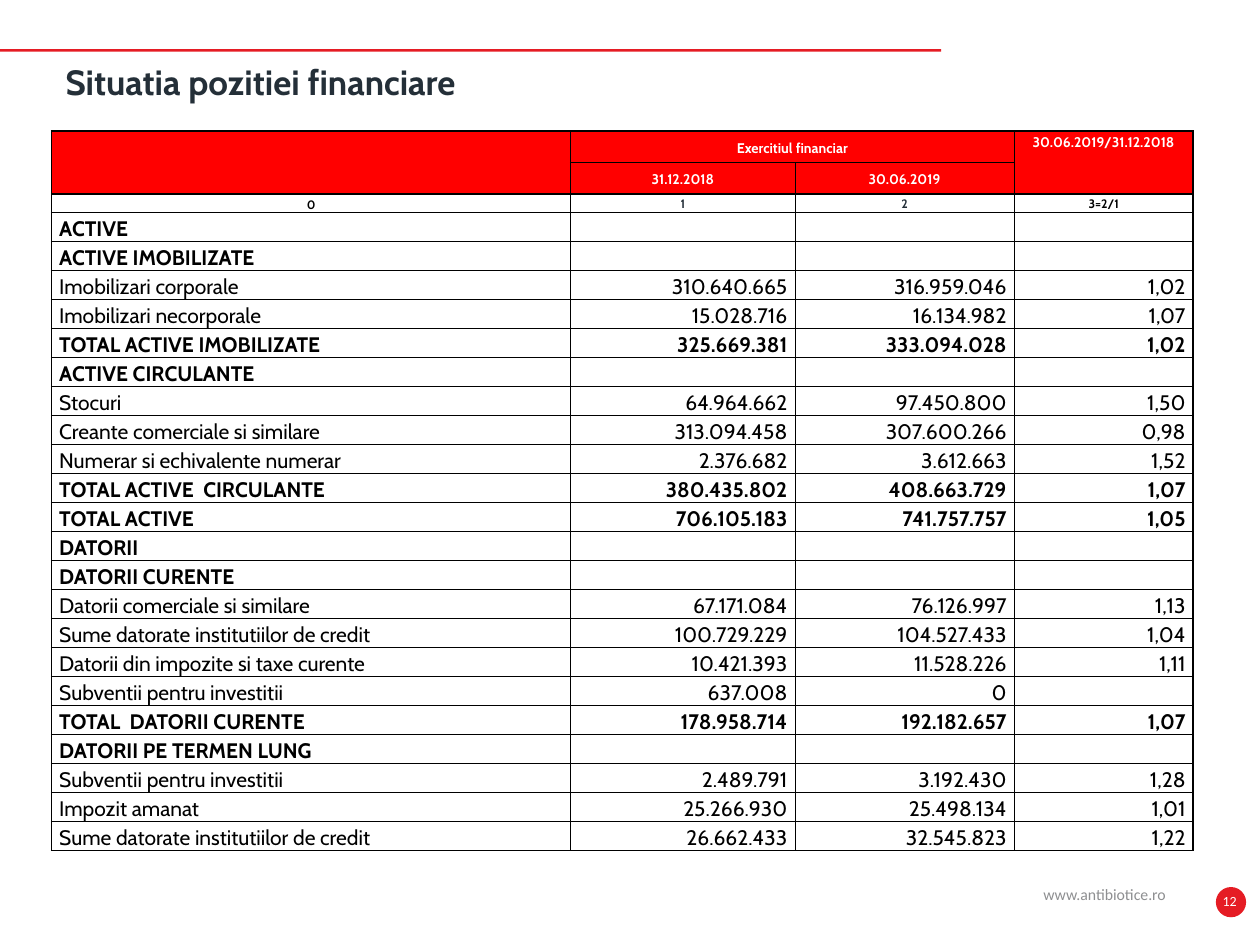
import pptx
import pptx.util
import pptx.oxml
import pptx.dml.color
import pptx.enum.shapes
import pptx.enum.text

Pt = pptx.util.Pt
RGB = pptx.dml.color.RGBColor.from_string
ALIGN = pptx.enum.text.PP_ALIGN
ANCHOR = pptx.enum.text.MSO_ANCHOR
SHAPE = pptx.enum.shapes.MSO_SHAPE

THEME = {
    "accent": "E51C24", "header": "FF0000", "white": "FFFFFF", "black": "000000",
    "dark": "242F38", "grey": "8E8F91",
    "font": "Cabin", "small_font": "Calibri",
    "title": 20, "body": 12, "head": 8, "index": 7, "page": 8, "web": 9,
    "thick": 1, "thin": 0.5,
}

prs = pptx.Presentation()
prs.slide_width = pptx.util.Inches(10)
prs.slide_height = pptx.util.Inches(7.5)
COLS = 100
unit = prs.slide_width / COLS


def grid(*cells):
    return [round(c * unit) for c in cells]


def write(tf, text, size, color, align, anchor, font=THEME["font"], bold=False):
    tf.vertical_anchor = anchor
    p = tf.paragraphs[0]
    p.text = text
    p.alignment = align
    for r in p.runs:
        r.font.size = Pt(size)
        r.font.name = font
        r.font.bold = bold
        r.font.color.rgb = RGB(color)
    if not text:
        end = pptx.oxml.parse_xml(
            '<a:endParaRPr xmlns:a="http://schemas.openxmlformats.org/drawingml/2006/main" '
            f'sz="{size * 100}"><a:latin typeface="{font}"/></a:endParaRPr>')
        p._p.append(end)
    return p


s = prs.slides.add_slide(prs.slide_layouts[5])

for kind, box in [(SHAPE.OVAL, (96.5, 70.4, 2.4, 2.4)),
                  (SHAPE.RECTANGLE, (0, 3.9, 74.7, 0.2))]:
    sp = s.shapes.add_shape(kind, *grid(*box))
    sp.shadow.inherit = False
    sp.fill.solid()
    sp.fill.fore_color.rgb = RGB(THEME["accent"])
    sp.line.fill.background()

for text, box, size, color, align in [
        ("12", (95.5, 69.5, 4.2, 4), THEME["page"], THEME["white"], ALIGN.CENTER),
        ("www.antibiotice.ro", (61.8, 69, 31.7, 4), THEME["web"], THEME["grey"], ALIGN.RIGHT)]:
    tf = s.shapes.add_textbox(*grid(*box)).text_frame
    tf.word_wrap = True
    write(tf, text, size, color, align, ANCHOR.MIDDLE, THEME["small_font"])

title = s.shapes.title
title.left, title.top, title.width, title.height = grid(3.5, 4.3, 82.7, 4.4)
tf = title.text_frame
tf.auto_size = pptx.enum.text.MSO_AUTO_SIZE.NONE
tf.margin_left = grid(1.7)[0]
write(tf, "Situatia pozitiei financiare", THEME["title"], THEME["dark"],
      ALIGN.LEFT, ANCHOR.TOP, bold=True)

header_rows = [
    ("", "Exercitiul financiar", "", "30.06.2019/31.12.2018"),
    ("", "31.12.2018", "30.06.2019", ""),
    ("0", "1", "2", "3=2/1"),
]
body_rows = [
    ("ACTIVE",),
    ("ACTIVE IMOBILIZATE",),
    ("Imobilizari corporale", "310.640.665", "316.959.046", "1,02"),
    ("Imobilizari necorporale", "15.028.716", "16.134.982", "1,07"),
    ("TOTAL ACTIVE IMOBILIZATE", "325.669.381", "333.094.028", "1,02"),
    ("ACTIVE CIRCULANTE",),
    ("Stocuri", "64.964.662", "97.450.800", "1,50"),
    ("Creante comerciale si similare", "313.094.458", "307.600.266", "0,98"),
    ("Numerar si echivalente numerar", "2.376.682", "3.612.663", "1,52"),
    ("TOTAL ACTIVE  CIRCULANTE", "380.435.802", "408.663.729", "1,07"),
    ("TOTAL ACTIVE", "706.105.183", "741.757.757", "1,05"),
    ("DATORII",),
    ("DATORII CURENTE",),
    ("Datorii comerciale si similare", "67.171.084", "76.126.997", "1,13"),
    ("Sume datorate institutiilor de credit", "100.729.229", "104.527.433", "1,04"),
    ("Datorii din impozite si taxe curente", "10.421.393", "11.528.226", "1,11"),
    ("Subventii pentru investitii", "637.008", "0", ""),
    ("TOTAL  DATORII CURENTE", "178.958.714", "192.182.657", "1,07"),
    ("DATORII PE TERMEN LUNG",),
    ("Subventii pentru investitii", "2.489.791", "3.192.430", "1,28"),
    ("Impozit amanat", "25.266.930", "25.498.134", "1,01"),
    ("Sume datorate institutiilor de credit", "26.662.433", "32.545.823", "1,22"),
]
rows = header_rows + body_rows
col_widths = grid(41.2, 17.8, 17.4, 14.2)
row_heights = grid(2.5, 2.5, 1.45, *[2.3] * len(body_rows))
last_row, last_col = len(rows) - 1, len(col_widths) - 1

table = s.shapes.add_table(len(rows), len(col_widths), *grid(4.1, 10.4),
                           sum(col_widths), sum(row_heights)).table
table.first_row = table.horz_banding = False
for column, width in zip(table.columns, col_widths):
    column.width = width
for row, height in zip(table.rows, row_heights):
    row.height = height

for i, row in enumerate(rows):
    for j in range(len(col_widths)):
        text = row[j] if j < len(row) else ""
        cell = table.cell(i, j)
        cell.margin_left = cell.margin_right = grid(0.6)[0]
        cell.margin_top = cell.margin_bottom = 0
        anchor, align, color, bold = ANCHOR.MIDDLE, ALIGN.CENTER, THEME["black"], True
        if i < 2:
            size, color = THEME["head"], THEME["white"]
        elif i == 2:
            size = THEME["index"]
            color = THEME["dark"] if j in (1, 2) else THEME["black"]
        else:
            size, bold = THEME["body"], row[0].isupper()
            align = ALIGN.RIGHT if j else ALIGN.LEFT
        if i < 3 and j == last_col:
            anchor = ANCHOR.TOP
        elif i == 2 and j == 0:
            anchor = ANCHOR.BOTTOM
        cell.vertical_anchor = anchor
        p = write(cell.text_frame, text, size, color, align, anchor, bold=bold)
        p.line_spacing = 1.15

        thick_sides = {"L": j in (0, 1), "R": j in (0, last_col),
                       "T": i in (0, 2), "B": i in (1, last_row)}
        for side, thick in thick_sides.items():
            width = Pt(THEME["thick"] if thick else THEME["thin"])
            cell._tc.get_or_add_tcPr().append(pptx.oxml.parse_xml(
                f'<a:ln{side} xmlns:a="http://schemas.openxmlformats.org/drawingml/2006/main" '
                f'w="{width}"><a:solidFill><a:srgbClr val="{THEME["black"]}"/>'
                f'</a:solidFill></a:ln{side}>'))
        if i < 2:
            cell.fill.solid()
            cell.fill.fore_color.rgb = RGB(THEME["header"])
        else:
            cell.fill.background()

for start, end in [((0, 0), (1, 0)), ((0, 1), (0, 2)), ((0, 3), (1, 3))]:
    table.cell(*start).merge(table.cell(*end))

prs.save("out.pptx")
